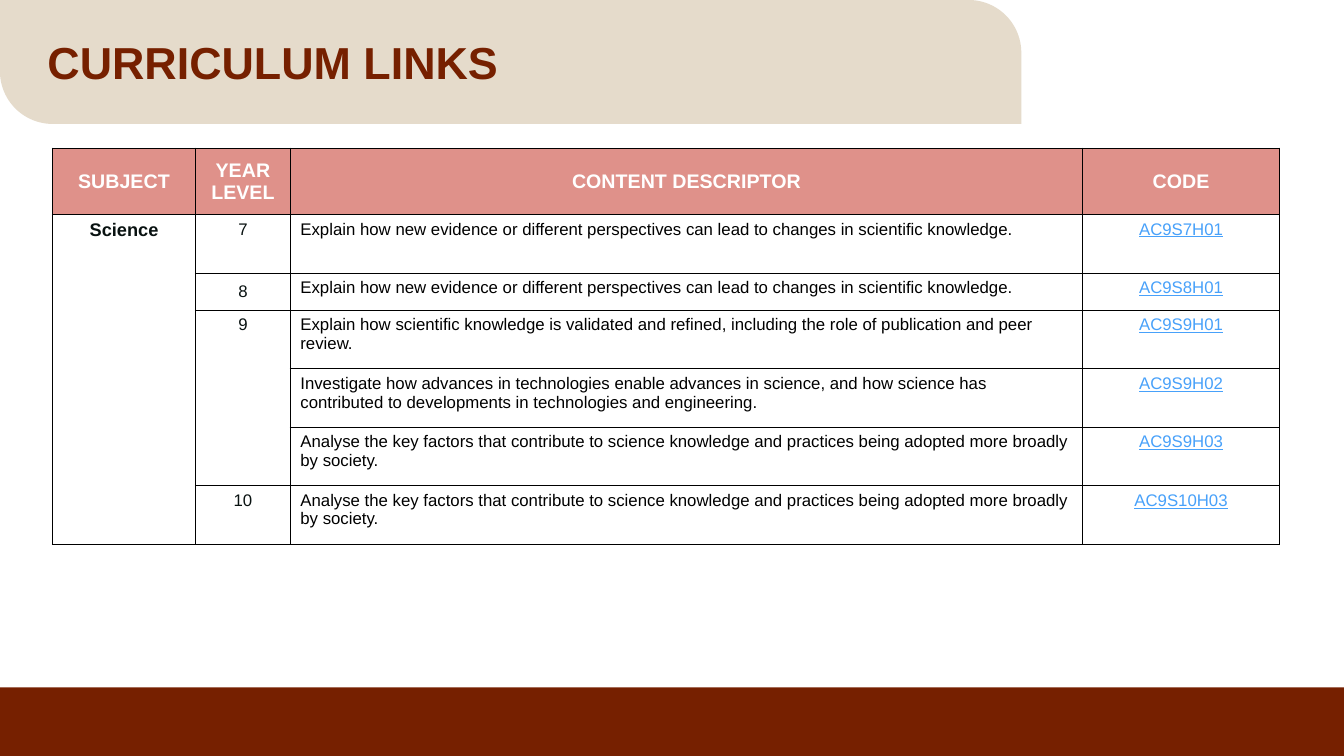
from lxml.etree import SubElement
from pptx import Presentation
from pptx.dml.color import RGBColor
from pptx.enum.shapes import MSO_SHAPE
from pptx.enum.text import MSO_ANCHOR, PP_ALIGN
from pptx.oxml.ns import qn
from pptx.util import Inches, Pt

BROWN = RGBColor(0x76, 0x20, 0x00)
SAND = RGBColor(0xE5, 0xDB, 0xCB)
ROSE = RGBColor(0xDF, 0x91, 0x8A)
WHITE = RGBColor(0xFF, 0xFF, 0xFF)
BLACK = RGBColor(0x00, 0x00, 0x00)
INK = RGBColor(0x09, 0x12, 0x11)
LINK_BLUE = RGBColor(0x48, 0xA1, 0xFA)

HEADINGS = ["SUBJECT", "YEAR LEVEL", "CONTENT DESCRIPTOR", "CODE"]
COLUMN_WIDTHS = [1.42, 0.94, 7.86, 1.95]
ROW_HEIGHTS = [0.66, 0.58, 0.37, 0.58, 0.58, 0.58, 0.58]
EVIDENCE = "Explain how new evidence or different perspectives can lead to changes in scientific knowledge."
KEY_FACTORS = ("Analyse the key factors that contribute to science knowledge and practices "
               "being adopted more broadly by society.")
LINKS = [
    ("7", EVIDENCE, "AC9S7H01"),
    ("8", EVIDENCE, "AC9S8H01"),
    ("9", "Explain how scientific knowledge is validated and refined, including the role of "
          "publication and peer review.", "AC9S9H01"),
    ("", "Investigate how advances in technologies enable advances in science, and how science has "
         "contributed to developments in technologies and engineering.", "AC9S9H02"),
    ("", KEY_FACTORS, "AC9S9H03"),
    ("10", KEY_FACTORS, "AC9S10H03"),
]


class SlideBuilder:
    font_name = "Arial"

    def __init__(self, page):
        self.page = page

    def add_span(self, para, text, size, color, bold=False, underline=False):
        span = para.add_run()
        span.text = text
        span.font.name = self.font_name
        span.font.size = Pt(size)
        span.font.color.rgb = color
        span.font.bold = bold
        span.font.underline = underline

    def band(self, kind, left, top, width, height, color):
        shape = self.page.shapes.add_shape(
            kind, Inches(left), Inches(top), Inches(width), Inches(height))
        shape.shadow.inherit = False
        shape.fill.solid()
        shape.fill.fore_color.rgb = color
        shape.line.fill.background()
        self.page.shapes.title.element.addprevious(shape.element)
        return shape

    def title(self, text, left, top, width, height):
        box = self.page.shapes.title
        box.left, box.top = Inches(left), Inches(top)
        box.width, box.height = Inches(width), Inches(height)
        box.text_frame.word_wrap = True
        box.text_frame.vertical_anchor = MSO_ANCHOR.MIDDLE
        para = box.text_frame.paragraphs[0]
        para.alignment = PP_ALIGN.LEFT
        para.line_spacing = 0.9
        self.add_span(para, text, 32, BROWN, bold=True)

    def table(self, left, top, widths, heights):
        frame = self.page.shapes.add_table(
            len(heights), len(widths), Inches(left), Inches(top),
            Inches(sum(widths)), Inches(sum(heights)))
        grid = frame.table
        for column, width in zip(grid.columns, widths):
            column.width = Inches(width)
        for row, height in zip(grid.rows, heights):
            row.height = Inches(height)
        for cell in grid.iter_cells():
            self.borders(cell)
            cell.fill.background()
        return grid

    def borders(self, cell):
        properties = cell._tc.get_or_add_tcPr()
        for side in ("lnL", "lnR", "lnT", "lnB"):
            line = SubElement(properties, qn(f"a:{side}"), w=str(Pt(1)))
            fill = SubElement(line, qn("a:solidFill"))
            SubElement(fill, qn("a:srgbClr"), val=str(BLACK))

    def cell(self, cell, text, size, color, align=PP_ALIGN.CENTER, **style):
        para = cell.text_frame.paragraphs[0]
        para.alignment = align
        self.add_span(para, text, size, color, **style)
        return para

    def heading(self, cell, text):
        cell.fill.solid()
        cell.fill.fore_color.rgb = ROSE
        cell.vertical_anchor = MSO_ANCHOR.MIDDLE
        self.cell(cell, text, 14, WHITE, bold=True)


def main():
    deck = Presentation()
    deck.slide_width, deck.slide_height = Inches(13.33), Inches(7.5)
    builder = SlideBuilder(deck.slides.add_slide(deck.slide_layouts[5]))

    builder.band(MSO_SHAPE.RECTANGLE, 0, 6.82, 13.33, 0.68, BROWN)
    header = builder.band(MSO_SHAPE.ROUND_2_DIAG_RECTANGLE, 0, 0, 10.13, 1.23, SAND)
    header.adjustments[0] = 0
    header.adjustments[1] = 0.425
    builder.title("CURRICULUM LINKS", 0.37, 0.21, 9.37, 0.87)

    grid = builder.table(0.52, 1.47, COLUMN_WIDTHS, ROW_HEIGHTS)
    grid.cell(1, 0).merge(grid.cell(6, 0))
    grid.cell(3, 1).merge(grid.cell(5, 1))
    for column, text in enumerate(HEADINGS):
        builder.heading(grid.cell(0, column), text)
    builder.cell(grid.cell(1, 0), "Science", 13, INK, bold=True)
    for row, (year, descriptor, code) in enumerate(LINKS, start=1):
        if year:
            para = builder.cell(grid.cell(row, 1), year, 12, INK)
            if year == "8":
                para.line_spacing = 1.19
                para.space_after = Pt(6)
        builder.cell(grid.cell(row, 2), descriptor, 12, BLACK, PP_ALIGN.LEFT)
        builder.cell(grid.cell(row, 3), code, 12, LINK_BLUE, underline=True)

    deck.save("out.pptx")


if __name__ == "__main__":
    main()
